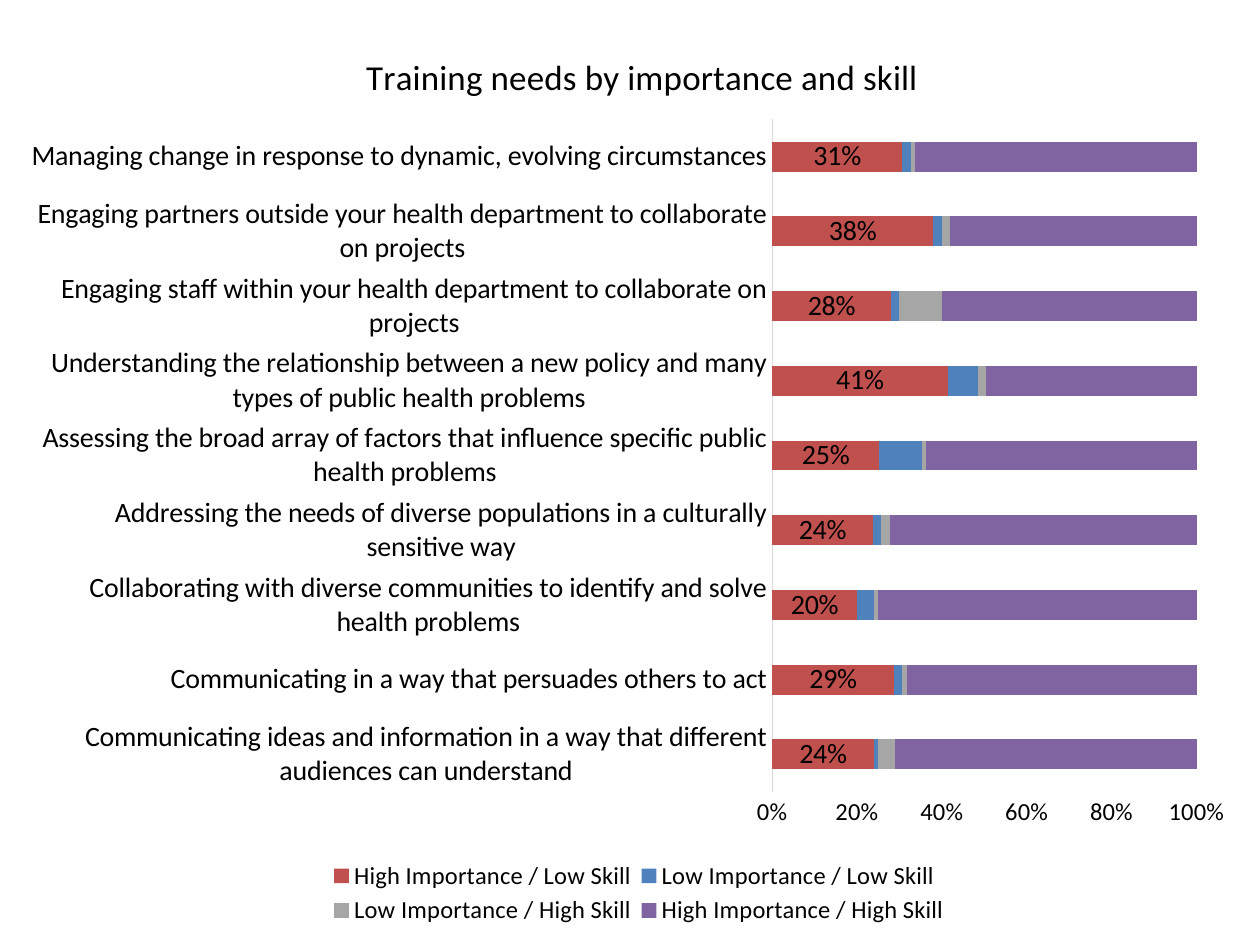
from dataclasses import dataclass

from lxml import etree
from pptx import Presentation
from pptx import util as u
from pptx.chart.data import CategoryChartData
from pptx.dml.color import RGBColor
from pptx.enum import chart as ch
from pptx.oxml.ns import qn


@dataclass(frozen=True)
class Theme:
    font: str = "Calibri"
    text: str = "000000"
    axis: str = "D9D9D9"
    series: tuple = ("C0504D", "4F81BD", "A6A6A6", "8064A2")
    title_size: int = 20
    label_size: int = 16
    small_size: int = 14
    base_size: int = 10


CATEGORIES = [
    "Communicating ideas and information in a way that different audiences can understand",
    "Communicating in a way that persuades others to act",
    "Collaborating with diverse communities to identify and solve health problems",
    "Addressing the needs of diverse populations in a culturally sensitive way",
    "Assessing the broad array of factors that influence specific public health problems",
    "Understanding the relationship between a new policy and many types of public health problems",
    "Engaging staff within your health department to collaborate on projects",
    "Engaging partners outside your health department to collaborate on projects",
    "Managing change in response to dynamic, evolving circumstances",
]
SERIES = {
    "High Importance / Low Skill": (0.24, 0.29, 0.2, 0.24, 0.25, 0.41, 0.28, 0.38, 0.31),
    "Low Importance / Low Skill": (0.01, 0.02, 0.04, 0.02, 0.1, 0.07, 0.02, 0.02, 0.02),
    "Low Importance / High Skill": (0.04, 0.01, 0.01, 0.02, 0.01, 0.02, 0.1, 0.02, 0.01),
    "High Importance / High Skill": (0.71, 0.69, 0.75, 0.73, 0.63, 0.49, 0.6, 0.58, 0.67),
}


def set_layout(parent, index, inner=False, **fractions):
    """Place a chart part by fractions (x, y, w, h) of the chart's size."""
    for old in parent.findall(qn("c:layout")):
        parent.remove(old)
    layout = etree.Element(qn("c:layout"))
    manual = etree.SubElement(layout, qn("c:manualLayout"))
    settings = {"layoutTarget": "inner"} if inner else {}
    settings.update(xMode="edge", yMode="edge", **fractions)
    for tag, value in settings.items():
        etree.SubElement(manual, qn(f"c:{tag}")).set("val", str(value))
    parent.insert(index, layout)


class SlideBuilder:
    def __init__(self, slide, theme):
        self.slide, self.theme = slide, theme

    def style(self, font, size):
        font.name, font.size, font.bold = self.theme.font, u.Pt(size), False
        font.color.rgb = RGBColor.from_string(self.theme.text)

    def stacked_bars(self, left, top, width, height):
        data = CategoryChartData(number_format="0%")
        data.categories = CATEGORIES
        for name, values in SERIES.items():
            data.add_series(name, values)
        chart = self.slide.shapes.add_chart(
            ch.XL_CHART_TYPE.BAR_STACKED_100,
            u.Pt(left), u.Pt(top), u.Pt(width), u.Pt(height), data).chart
        self.style(chart.font, self.theme.base_size)
        plot = chart.plots[0]
        plot.gap_width, plot.overlap, plot.vary_by_categories = 150, 100, False
        for series, color in zip(plot.series, self.theme.series):
            series.format.fill.solid()
            series.format.fill.fore_color.rgb = RGBColor.from_string(color)
        set_layout(chart._chartSpace.chart.plotArea, 0, inner=True,
                   x=0.61, y=0.12, w=0.35, h=0.73)
        return chart

    def title(self, chart, text):
        title = chart.chart_title
        p = title.text_frame.paragraphs[0]
        r = p.add_run()
        r.text = text
        self.style(r.font, self.theme.title_size)
        set_layout(title._element, 1, x=0.27, y=0.04)

    def axes(self, chart):
        cat, val = chart.category_axis, chart.value_axis
        for axis, size in ((cat, self.theme.label_size), (val, self.theme.small_size)):
            self.style(axis.tick_labels.font, size)
            axis.major_tick_mark = axis.minor_tick_mark = ch.XL_TICK_MARK.NONE
            axis.has_major_gridlines = False
        cat.format.line.color.rgb = RGBColor.from_string(self.theme.axis)
        cat.format.line.width = u.Pt(0.75)
        val.format.line.fill.background()
        val.minimum_scale, val.maximum_scale, val.major_unit = 0, 1, 0.2
        val.tick_labels.number_format = "0%"
        val.tick_labels.number_format_is_linked = False

    def data_labels(self, series):
        labels = series.data_labels
        labels.show_value = True
        labels.number_format, labels.number_format_is_linked = "0%", False
        labels.position = ch.XL_LABEL_POSITION.CENTER
        self.style(labels.font, self.theme.label_size)

    def legend(self, chart):
        chart.has_legend = True
        legend = chart.legend
        legend.position = ch.XL_LEGEND_POSITION.BOTTOM
        legend.include_in_layout = False
        self.style(legend.font, self.theme.small_size)
        set_layout(legend._element, 1, x=0.24, y=0.92, w=0.52, h=0.08)


def main():
    prs = Presentation()
    prs.slide_width, prs.slide_height = u.Pt(720), u.Pt(540)
    s = SlideBuilder(prs.slides.add_slide(prs.slide_layouts[6]), Theme())
    chart = s.stacked_bars(18, 5, 693.5, 526.5)
    s.title(chart, "Training needs by importance and skill")
    s.axes(chart)
    s.data_labels(chart.plots[0].series[0])
    s.legend(chart)
    prs.save("out.pptx")


if __name__ == "__main__":
    main()
